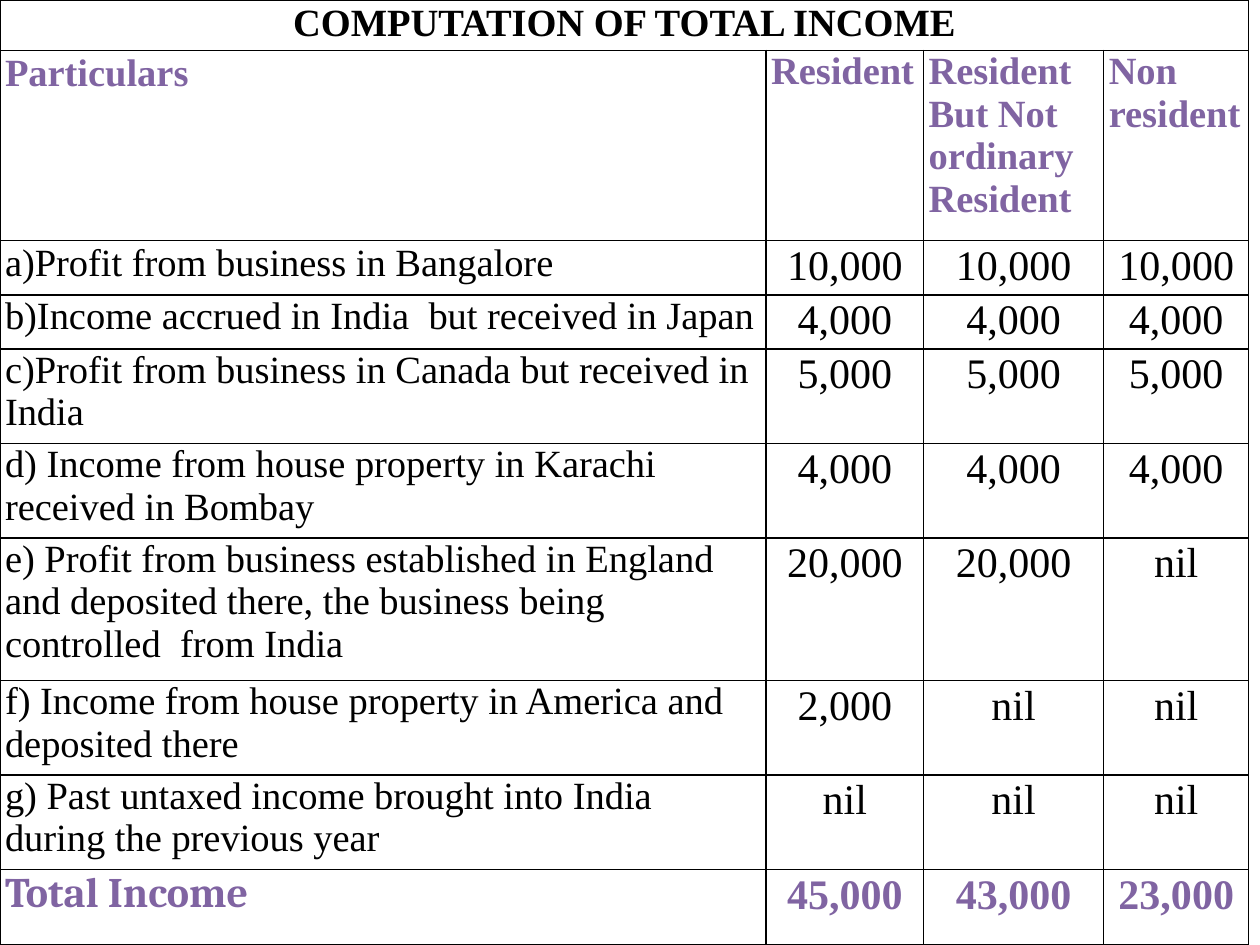
from dataclasses import dataclass

from lxml.etree import SubElement
from pptx import Presentation
from pptx.dml.color import RGBColor
from pptx.enum.text import PP_ALIGN as Align
from pptx.oxml.ns import qn
from pptx.util import Inches, Pt


@dataclass(frozen=True)
class Theme:
    ink: str = "000000"
    accent: str = "8064A2"
    paper: str = "FFFFFF"
    body_font: str = "Times New Roman"
    total_font: str = "Cambria"
    label_size: int = 22
    amount_size: int = 24
    border_width: int = 1
    loose_spacing: float = 1.05


THEME = Theme()

COLUMN_WIDTHS = [6.08, 1.25, 1.43, 1.15]
ROW_HEIGHTS = [0.4, 1.51, 0.43, 0.43, 0.75, 0.75, 1.13, 0.75, 0.75, 0.6]

TITLE = "COMPUTATION OF TOTAL INCOME"
HEADINGS = ["Particulars", "Resident", "Resident But Not ordinary Resident", "Non resident"]
INCOMES = [
    ("a)Profit from business in Bangalore", "10,000", "10,000", "10,000"),
    ("b)Income accrued in India  but received in Japan", "4,000", "4,000", "4,000"),
    ("c)Profit from business in Canada but received in India", "5,000", "5,000", "5,000"),
    ("d) Income from house property in Karachi received in Bombay", "4,000", "4,000", "4,000"),
    ("e) Profit from business established in England and deposited there, "
     "the business being controlled  from India", "20,000", "20,000", "nil"),
    ("f) Income from house property in America and deposited there", "2,000", "nil", "nil"),
    ("g) Past untaxed income brought into India during the previous year", "nil", "nil", "nil"),
]
TOTALS = ["Total Income", "45,000", "43,000", "23,000"]


def add_borders(cell):
    """Draw all four sides; border elements must precede the cell's fill."""
    properties = cell._tc.get_or_add_tcPr()
    for position, side in enumerate(("lnL", "lnR", "lnT", "lnB")):
        border = SubElement(properties, qn(f"a:{side}"), w=str(Pt(THEME.border_width)))
        properties.insert(position, border)
        fill = SubElement(border, qn("a:solidFill"))
        SubElement(fill, qn("a:srgbClr"), val=THEME.ink)


def format_cell(cell):
    cell.margin_left = cell.margin_right = Inches(0.04)
    cell.margin_top = cell.margin_bottom = 0
    cell.fill.solid()
    cell.fill.fore_color.rgb = RGBColor.from_string(THEME.paper)
    add_borders(cell)


def write(cell, text, size=THEME.label_size, color=THEME.ink, bold=False,
          font=THEME.body_font, align=Align.LEFT, spacing=None):
    paragraph = cell.text_frame.paragraphs[0]
    paragraph.text = text
    paragraph.alignment = align
    paragraph.line_spacing = spacing
    run_font = paragraph.runs[0].font
    run_font.name = font
    run_font.size = Pt(size)
    run_font.bold = bold
    run_font.color.rgb = RGBColor.from_string(color)


def write_amounts(table, row, amounts, **style):
    for column, amount in enumerate(amounts, start=1):
        write(table.cell(row, column), amount, size=THEME.amount_size,
              align=Align.CENTER, spacing=THEME.loose_spacing, **style)


def add_income_table(slide):
    frame = slide.shapes.add_table(len(ROW_HEIGHTS), len(COLUMN_WIDTHS), 0, 0,
                                   Inches(sum(COLUMN_WIDTHS)), Inches(sum(ROW_HEIGHTS)))
    table = frame.table
    table.first_row = table.horz_banding = False
    for column, width in zip(table.columns, COLUMN_WIDTHS):
        column.width = Inches(width)
    for row, height in zip(table.rows, ROW_HEIGHTS):
        row.height = Inches(height)
    for cell in table.iter_cells():
        format_cell(cell)
    return table


def fill_headings(table):
    title_cell = table.cell(0, 0)
    title_cell.merge(table.cell(0, len(COLUMN_WIDTHS) - 1))
    write(title_cell, TITLE, bold=True, align=Align.CENTER, spacing=THEME.loose_spacing)
    for column, heading in enumerate(HEADINGS):
        write(table.cell(1, column), heading, color=THEME.accent, bold=True,
              spacing=None if column else THEME.loose_spacing)


def fill_incomes(table):
    first_row = 2
    for row, (label, *amounts) in enumerate(INCOMES, start=first_row):
        write(table.cell(row, 0), label,
              spacing=THEME.loose_spacing if row == first_row else None)
        write_amounts(table, row, amounts)
    hanging = table.cell(first_row, 0).text_frame.paragraphs[0]._p.get_or_add_pPr()
    hanging.set("marL", str(Inches(0.5)))
    hanging.set("indent", str(Inches(-0.5)))


def fill_totals(table):
    row = len(ROW_HEIGHTS) - 1
    label, *amounts = TOTALS
    write(table.cell(row, 0), label, size=THEME.amount_size, color=THEME.accent,
          bold=True, font=THEME.total_font)
    write_amounts(table, row, amounts, color=THEME.accent, bold=True)


def main():
    presentation = Presentation()
    presentation.slide_width = Inches(10)
    presentation.slide_height = Inches(7.5)
    blank_layout = presentation.slide_layouts[6]
    table = add_income_table(presentation.slides.add_slide(blank_layout))
    fill_headings(table)
    fill_incomes(table)
    fill_totals(table)
    presentation.save("out.pptx")


if __name__ == "__main__":
    main()
